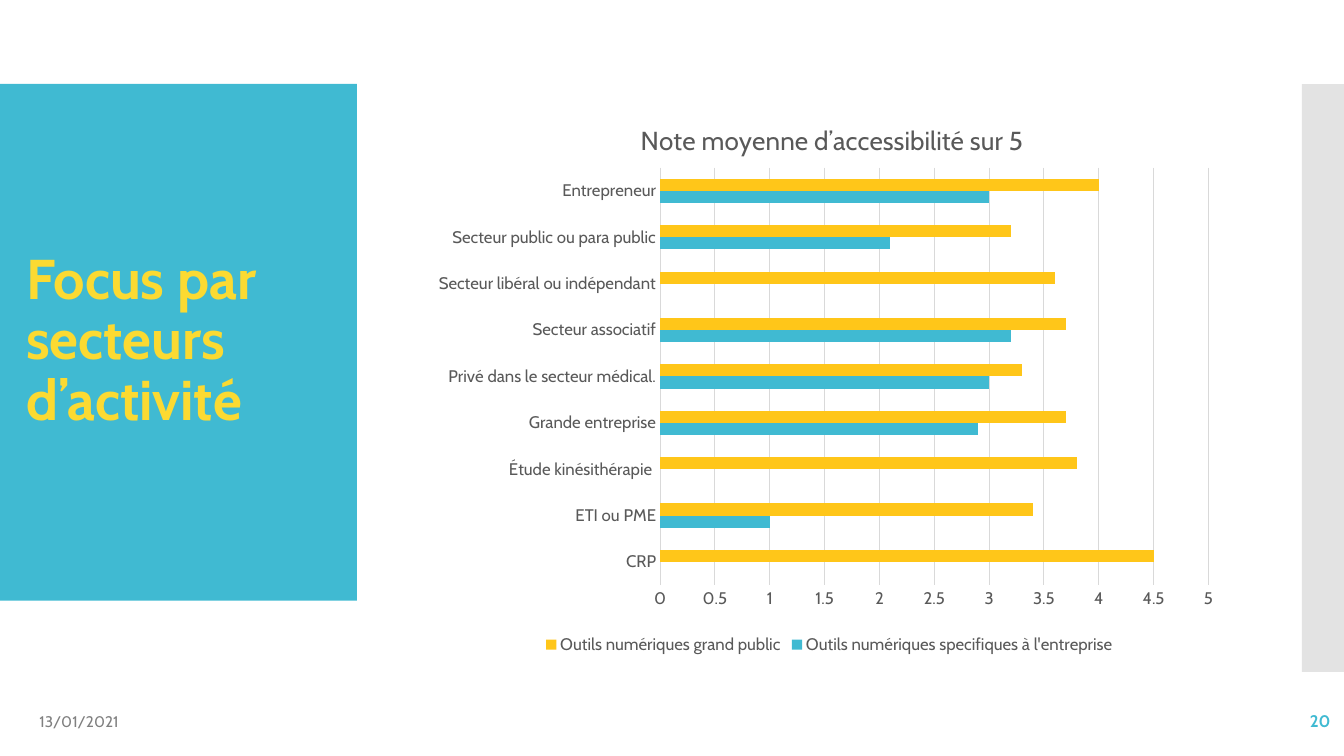
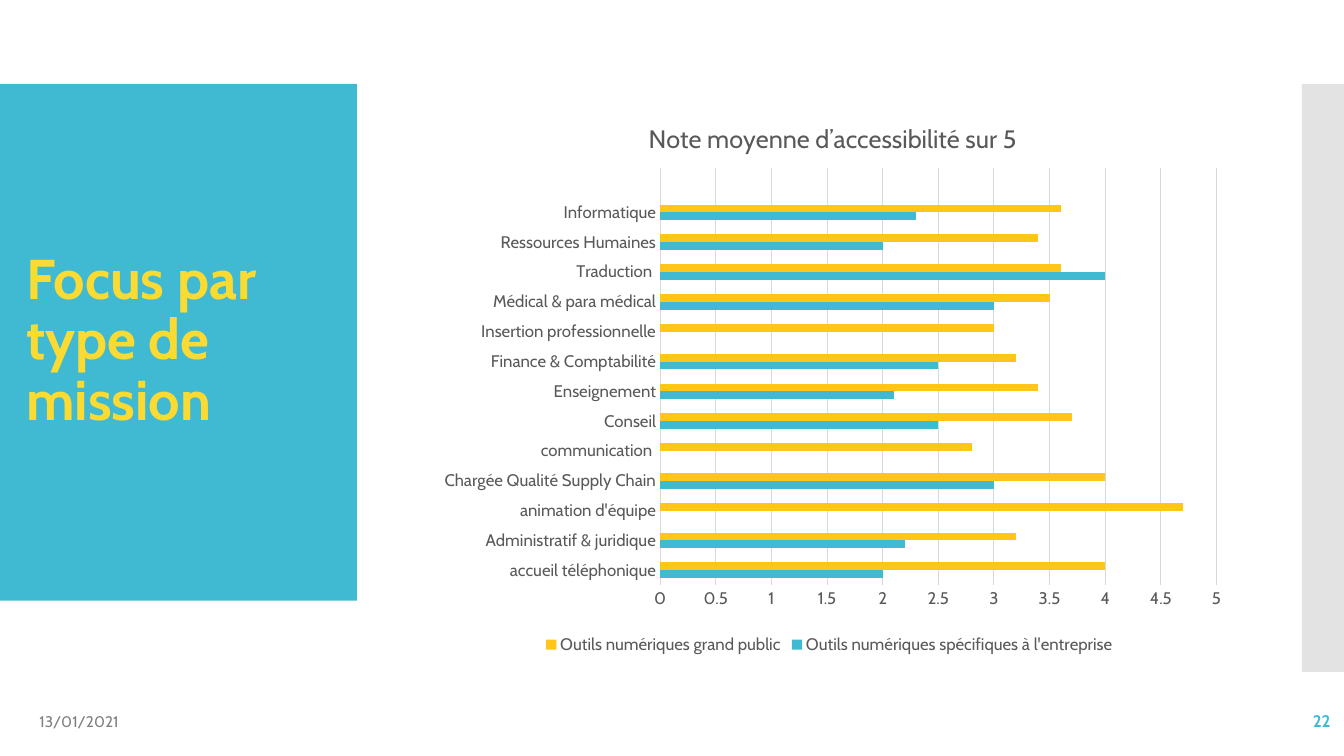
import pptx
import pptx.chart.data
import pptx.dml.color
import pptx.enum.chart
import pptx.enum.shapes
import pptx.enum.text
import pptx.oxml
import pptx.oxml.ns
import pptx.util

Pt = pptx.util.Pt
FONT = "Cabin"
BLUE, YELLOW, GOLD = "40BAD2", "FBDA32", "FFC619"
GREY, DARK, PALE, BAND = "808080", "595959", "D9D9D9", "C8C8C8"
LEFT_BAND = (0, 60, 255, 369)
RIGHT_BAND = (930, 60, 30, 420)
CHART_BOX = (304.5, 67.5, 576, 403)
FOOTER_BOX = (21, 500.5, 936.5, 29)
DATE = "13/01/2021"
CHART_TITLE = "Note moyenne d’accessibilité sur 5"

# Each row: category, company tools, public tools (bottom to top)
SECTORS = [
    ("CRP", None, 4.5),
    ("ETI ou PME", 1, 3.4),
    ("Étude kinésithérapie ", None, 3.8),
    ("Grande entreprise", 2.9, 3.7),
    ("Privé dans le secteur médical.", 3, 3.3),
    ("Secteur associatif", 3.2, 3.7),
    ("Secteur libéral ou indépendant", None, 3.6),
    ("Secteur public ou para public", 2.1, 3.2),
    ("Entrepreneur", 3, 4),
]
MISSIONS = [
    ("accueil téléphonique", 2, 4),
    ("Administratif & juridique", 2.2, 3.2),
    ("animation d'équipe", None, 4.7),
    ("Chargée Qualité Supply Chain", 3, 4),
    ("communication ", None, 2.8),
    ("Conseil", 2.5, 3.7),
    ("Enseignement", 2.1, 3.4),
    ("Finance & Comptabilité", 2.5, 3.2),
    ("Insertion professionnelle", None, 3),
    ("Médical & para médical", 3, 3.5),
    ("Traduction ", 4, 3.6),
    ("Ressources Humaines", 2, 3.4),
    ("Informatique", 2.3, 3.6),
    ("", None, None),
]


def rgb(color):
    return pptx.dml.color.RGBColor.from_string(color)


def set_font(font, size, color, bold=False):
    font.name, font.size, font.bold = FONT, Pt(size), bold
    font.color.rgb = rgb(color)


def set_layout(parent, index, inner=False, **parts):
    """Fix the place of a chart part, in fractions of the chart."""
    for old in parent.xpath("c:layout"):
        parent.remove(old)
    target = '<c:layoutTarget val="inner"/>' if inner else ""
    modes = '<c:xMode val="edge"/><c:yMode val="edge"/>'
    values = "".join(f'<c:{k} val="{v}"/>' for k, v in parts.items())
    parent.insert(index, pptx.oxml.parse_xml(
        f'<c:layout {pptx.oxml.ns.nsdecls("c")}><c:manualLayout>'
        f'{target}{modes}{values}</c:manualLayout></c:layout>'))


def add_bands(slide):
    """Place the two side bands on the layout, behind all slides."""
    title = slide.slide_layout.placeholders[0].element
    bands = [(LEFT_BAND, BLUE, 100), (RIGHT_BAND, BAND, 50)]
    for number, (box, color, opacity) in enumerate(bands):
        sp = slide.shapes.add_shape(
            pptx.enum.shapes.MSO_SHAPE.RECTANGLE, *map(Pt, box))
        sp.shadow.inherit = False
        sp.fill.solid()
        sp.fill.fore_color.rgb = rgb(color)
        sp.line.fill.background()
        if opacity < 100:
            clr = sp.element.xpath("p:spPr/a:solidFill/a:srgbClr")[0]
            clr.append(pptx.oxml.parse_xml(
                f'<a:alpha {pptx.oxml.ns.nsdecls("a")} '
                f'val="{opacity * 1000}"/>'))
        sp.element.xpath(".//p:cNvPr")[0].set("id", str(20 + number))
        title.addprevious(sp.element)


def add_title(slide, box, text):
    x, y, w, h = box
    sp = slide.shapes.title
    sp.left, sp.top, sp.width, sp.height = map(
        Pt, (x + 11.5, y + 3, w - 23, h - 7))
    tf = sp.text_frame
    tf.text = text
    tf.word_wrap = True
    tf.auto_size = pptx.enum.text.MSO_AUTO_SIZE.NONE
    tf.vertical_anchor = pptx.enum.text.MSO_ANCHOR.MIDDLE
    p = tf.paragraphs[0]
    p.alignment = pptx.enum.text.PP_ALIGN.LEFT
    p.line_spacing = 0.9
    set_font(p.font, 40, YELLOW, True)
    # Tighter letter spacing
    for r in p.runs:
        r.font.element.set("spc", "-60") if hasattr(r.font, "element") else \
            p.runs[0].text and p.font


def add_chart(slide, box, rows, company_name, title_size, title_x, plot):
    names, company, public = zip(*rows)
    data = pptx.chart.data.CategoryChartData()
    data.categories = names
    data.add_series(company_name, company)
    data.add_series("Outils numériques grand public", public)
    chart = slide.shapes.add_chart(
        pptx.enum.chart.XL_CHART_TYPE.BAR_CLUSTERED, *map(Pt, box), data).chart
    set_font(chart.font, 12, DARK)

    # Bars
    bars = chart.plots[0]
    bars.gap_width, bars.overlap, bars.vary_by_categories = 182, 0, False
    for series, color in zip(bars.series, (BLUE, GOLD)):
        series.format.fill.solid()
        series.format.fill.fore_color.rgb = rgb(color)

    # Axes
    cat, val = chart.category_axis, chart.value_axis
    for axis in (cat, val):
        axis.major_tick_mark = pptx.enum.chart.XL_TICK_MARK.NONE
        axis.minor_tick_mark = pptx.enum.chart.XL_TICK_MARK.NONE
        set_font(axis.tick_labels.font, 12, DARK)
    val.minimum_scale, val.maximum_scale, val.major_unit = 0, 5, 0.5
    val.has_major_gridlines = True
    val.format.line.fill.background()
    for line in (cat.format.line, val.major_gridlines.format.line):
        line.color.rgb = rgb(PALE)
        line.width = Pt(0.75)

    # Title, legend and plot area
    chart.has_title = True
    tf = chart.chart_title.text_frame
    tf.text = CHART_TITLE
    set_font(tf.paragraphs[0].font, title_size, DARK)
    chart.has_legend = True
    chart.legend.position = pptx.enum.chart.XL_LEGEND_POSITION.BOTTOM
    chart.legend.include_in_layout = False
    set_font(chart.legend.font, 12, DARK)
    root = chart.element
    set_layout(root.xpath("c:chart/c:title")[0], 1, x=title_x, y=0.04)
    set_layout(root.xpath("c:chart/c:plotArea")[0], 0, True, **plot)


def add_footer(slide, box, number):
    x, y, w, h = box
    align = pptx.enum.text.PP_ALIGN
    for left, width, text, side, style in (
            (x, 216, DATE, align.LEFT, (11, GREY)),
            (x + w - 120, 120, str(number), align.RIGHT, (12, BLUE, True))):
        tf = slide.shapes.add_textbox(
            *map(Pt, (left, y, width, h))).text_frame
        tf.word_wrap = True
        tf.vertical_anchor = pptx.enum.text.MSO_ANCHOR.MIDDLE
        p = tf.paragraphs[0]
        p.text = text
        p.alignment = side
        set_font(p.font, *style)


def add_chart_slide(prs, title, number, **chart):
    slide = prs.slides.add_slide(prs.slide_layouts[5])
    add_title(slide, LEFT_BAND, title)
    add_chart(slide, CHART_BOX, **chart)
    add_footer(slide, FOOTER_BOX, number)
    return slide


def main():
    prs = pptx.Presentation()
    prs.slide_width, prs.slide_height = Pt(960), Pt(540)
    first = add_chart_slide(
        prs, "Focus par secteurs d’activité", 20, rows=SECTORS,
        company_name="Outils numériques specifiques à l'entreprise",
        title_size=18.6, title_x=0.26,
        plot=dict(x=0.29, y=0.13, w=0.68, h=0.74))
    add_bands(first)
    add_chart_slide(
        prs, "Focus par type de mission", 22, rows=MISSIONS,
        company_name="Outils numériques spécifiques à l'entreprise",
        title_size=18, title_x=0.27,
        plot=dict(x=0.29, y=0.13, w=0.69, h=0.74))
    prs.save("out.pptx")


if __name__ == "__main__":
    main()
